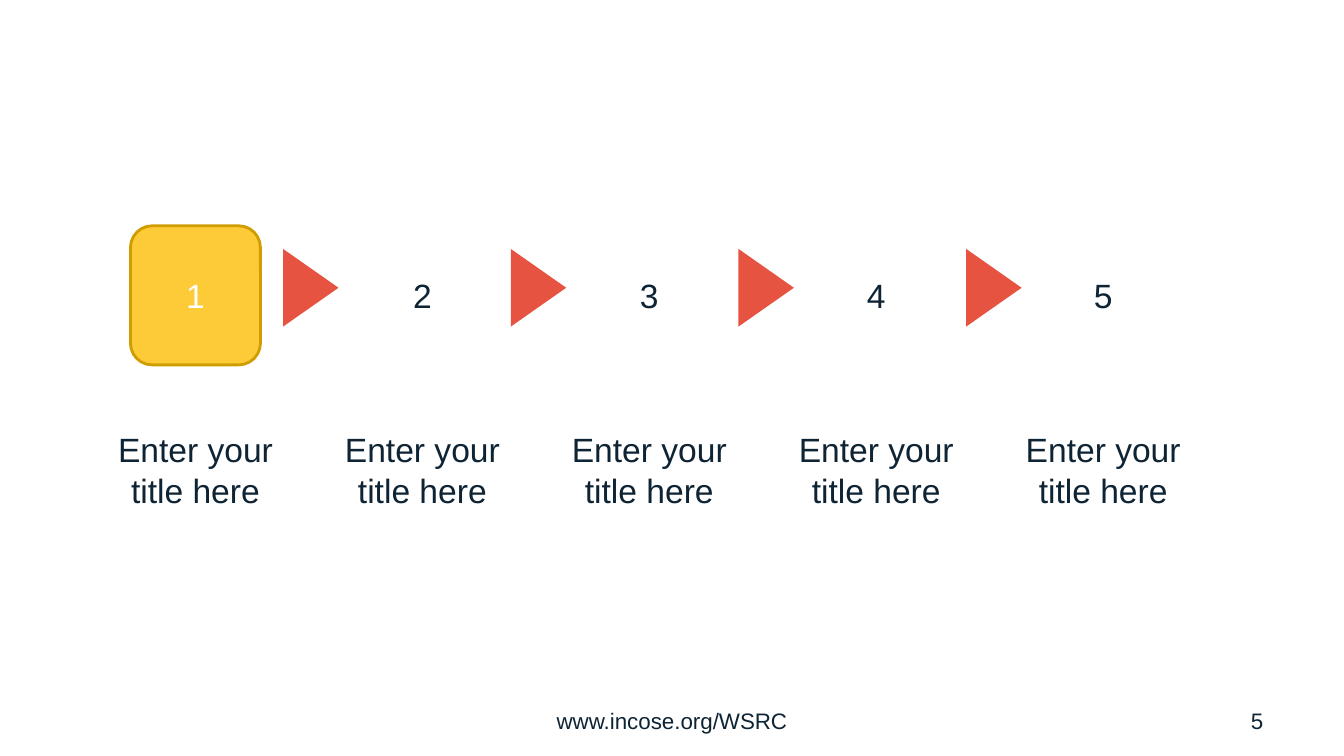
from pptx import Presentation
from pptx import util as u
from pptx.dml.color import RGBColor
from pptx.enum import shapes, text

WIDTH, HEIGHT = 13.34, 7.5
NAVY, WHITE, YELLOW, GOLD, RED = "0E2434", "FFFFFF", "FECB38", "D09D00", "E65341"

STEPS = [
    ("1", "Enter your title here"),
    ("2", "Enter your title here"),
    ("3", "Enter your title here"),
    ("4", "Enter your title here"),
    ("5", "Enter your title here"),
]
ACTIVE_STEP = 0
FOOTERS = [
    ("www.incose.org/WSRC", 4.56, 4.22, text.PP_ALIGN.CENTER),
    ("5", 9.56, 3.11, text.PP_ALIGN.RIGHT),
]

# Step grid, in inches
FIRST_CENTER, PITCH = 1.94, 2.2525
BOX_TOP, BOX_WIDTH, BOX_HEIGHT = 2.24, 1.29, 1.38
CAPTION_TOP, CAPTION_WIDTH, CAPTION_HEIGHT = 4.21, 2.1, 1.3
ARROW_OFFSET, ARROW_PITCH = 1.145, 2.26
ARROW_TOP, ARROW_WIDTH, ARROW_HEIGHT = 2.58, 0.77, 0.55
FOOTER_TOP, FOOTER_HEIGHT = 6.95, 0.4


def color(hex_value):
    return RGBColor.from_string(hex_value)


def inches(*values):
    return [u.Inches(value) for value in values]


def write(shape, words, size, hex_color, align=text.PP_ALIGN.CENTER,
          anchor=text.MSO_ANCHOR.MIDDLE, **margins):
    frame = shape.text_frame
    for name, value in {"word_wrap": True, "vertical_anchor": anchor, **margins}.items():
        setattr(frame, name, value)
    paragraph = frame.paragraphs[0]
    paragraph.text = words
    paragraph.alignment = align
    for name, value in {"name": "Arial", "size": u.Pt(size)}.items():
        setattr(paragraph.font, name, value)
    paragraph.font.color.rgb = color(hex_color)


def add_filled(slide, preset, box, fill, line=None):
    shape = slide.shapes.add_shape(preset, *inches(*box))
    shape.shadow.inherit = False
    shape.fill.solid()
    shape.fill.fore_color.rgb = color(fill)
    if line:
        shape.line.color.rgb = color(line)
        shape.line.width = u.Pt(2)
    else:
        shape.line.fill.background()
    return shape


def add_step(slide, index, number, caption):
    center = FIRST_CENTER + index * PITCH
    active = index == ACTIVE_STEP
    box = add_filled(slide, shapes.MSO_SHAPE.ROUNDED_RECTANGLE,
                     (center - BOX_WIDTH / 2, BOX_TOP, BOX_WIDTH, BOX_HEIGHT),
                     YELLOW if active else WHITE, GOLD if active else None)
    write(box, number, 24, WHITE if active else NAVY)
    caption_box = slide.shapes.add_textbox(
        *inches(center - CAPTION_WIDTH / 2, CAPTION_TOP, CAPTION_WIDTH, CAPTION_HEIGHT))
    write(caption_box, caption, 24, NAVY, anchor=text.MSO_ANCHOR.TOP)


def add_arrow(slide, index):
    center = FIRST_CENTER + ARROW_OFFSET + index * ARROW_PITCH
    arrow = add_filled(slide, shapes.MSO_SHAPE.ISOSCELES_TRIANGLE,
                       (center - ARROW_WIDTH / 2, ARROW_TOP, ARROW_WIDTH, ARROW_HEIGHT), RED)
    arrow.rotation = 90


def main():
    presentation = Presentation()
    presentation.slide_width, presentation.slide_height = inches(WIDTH, HEIGHT)
    slide = presentation.slides.add_slide(presentation.slide_layouts.get_by_name("Blank"))

    side, edge = inches(0.13, 0.07)
    for words, left, width, align in FOOTERS:
        footer = slide.shapes.add_textbox(*inches(left, FOOTER_TOP, width, FOOTER_HEIGHT))
        write(footer, words, 16, NAVY, align, margin_left=side, margin_right=side,
              margin_top=edge, margin_bottom=edge)

    for index, (number, caption) in enumerate(STEPS):
        add_step(slide, index, number, caption)
        if index < len(STEPS) - 1:
            add_arrow(slide, index)

    presentation.save("out.pptx")


if __name__ == "__main__":
    main()
